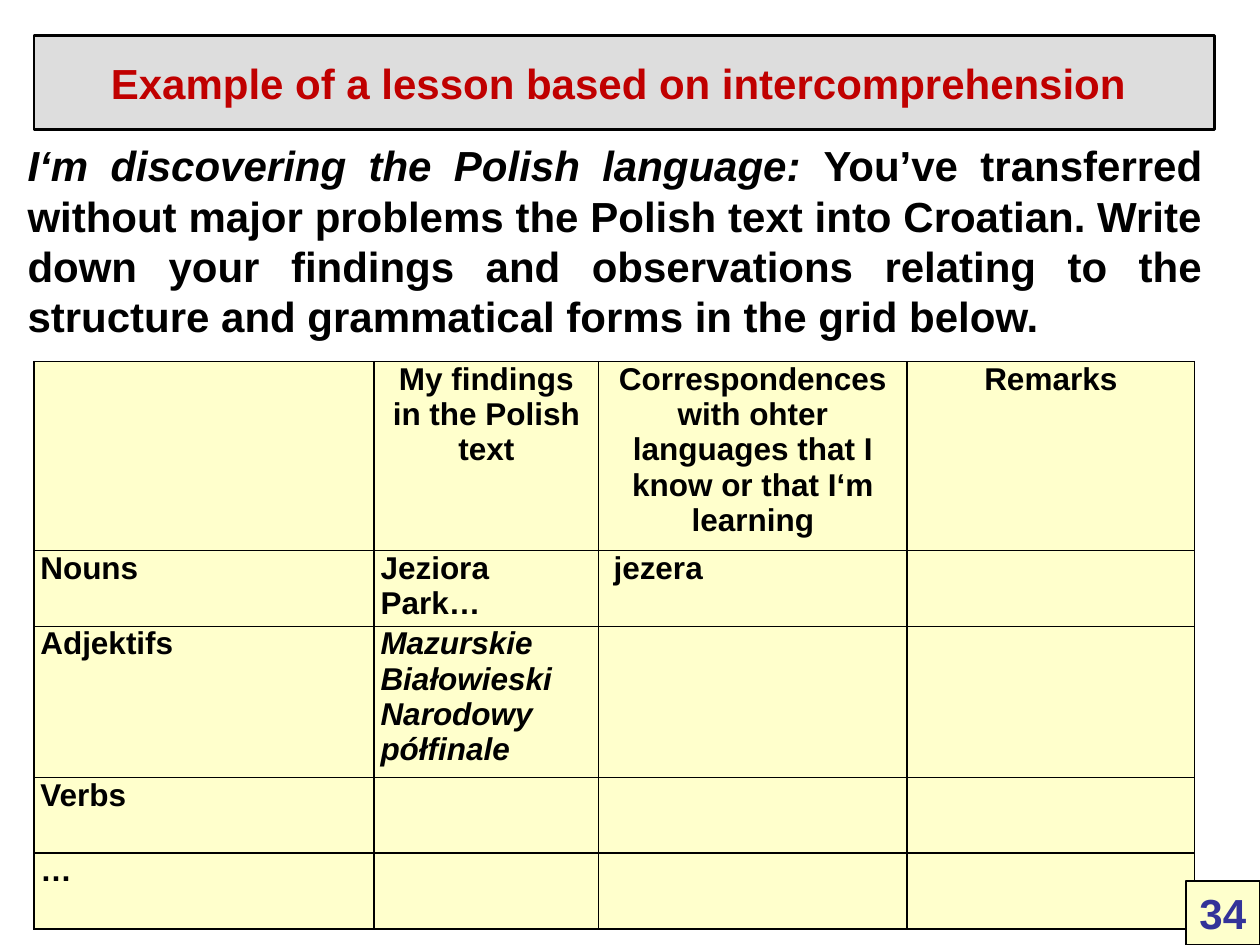
import dataclasses

import lxml.etree
import pptx
import pptx.dml.color
import pptx.enum.shapes
import pptx.enum.text
import pptx.oxml.ns
import pptx.util

COLS, ROWS = 100, 75  # slide grid, each step a tenth of an inch
ALIGN = pptx.enum.text.PP_ALIGN
ANCHOR = pptx.enum.text.MSO_ANCHOR


@dataclasses.dataclass(frozen=True)
class Theme:
    font: str = "Arial"
    ink: str = "000000"
    title: str = "C00000"
    number: str = "333399"
    banner: str = "DDDDDD"
    cream: str = "FFFFCC"
    badge: str = "FEFFCC"
    large: int = 24
    small: int = 18


THEME = Theme()


def span(steps):
    return pptx.util.Inches(steps / 10)


def color(code):
    return pptx.dml.color.RGBColor.from_string(code)


def apply(target, values):
    for name, value in values.items():
        setattr(target, name, value)


def write(para, text, size, ink=THEME.ink, align=ALIGN.LEFT, italic=False):
    para.alignment = align
    run = para.add_run()
    run.text = text
    apply(run.font, {"name": THEME.font, "size": pptx.util.Pt(size),
                     "bold": True, "italic": italic})
    run.font.color.rgb = color(ink)


def add_panel(slide, box, text, fill, ink, width):
    """Outlined rectangle with one centred line of text."""
    panel = slide.shapes.add_shape(
        pptx.enum.shapes.MSO_SHAPE.RECTANGLE, *map(span, box))
    panel.shadow.inherit = False
    panel.fill.solid()
    panel.fill.fore_color.rgb = color(fill)
    panel.line.color.rgb = color(THEME.ink)
    panel.line.width = pptx.util.Pt(width)
    apply(panel.text_frame, {"word_wrap": True, "vertical_anchor": ANCHOR.MIDDLE})
    write(panel.text_frame.paragraphs[0], text, THEME.large, ink, ALIGN.CENTER)


def add_task(slide, box, lead, body):
    frame = slide.shapes.add_textbox(*map(span, box)).text_frame
    apply(frame, {"word_wrap": True,
                  "auto_size": pptx.enum.text.MSO_AUTO_SIZE.SHAPE_TO_FIT_TEXT})
    para = frame.paragraphs[0]
    write(para, lead, THEME.large, align=ALIGN.JUSTIFY, italic=True)
    write(para, body, THEME.large, align=ALIGN.JUSTIFY)


def add_border(cell):
    props = cell._tc.get_or_add_tcPr()
    for side in ("lnL", "lnR", "lnT", "lnB"):
        line = lxml.etree.SubElement(
            props, pptx.oxml.ns.qn("a:" + side), w=str(pptx.util.Pt(1)))
        fill = lxml.etree.SubElement(line, pptx.oxml.ns.qn("a:solidFill"))
        lxml.etree.SubElement(fill, pptx.oxml.ns.qn("a:srgbClr"), val=THEME.ink)


def fill_cell(cell, lines, align, italic):
    add_border(cell)
    cell.fill.solid()
    cell.fill.fore_color.rgb = color(THEME.cream)
    apply(cell, {"margin_left": span(0.5), "margin_right": span(0.5),
                 "margin_top": 0, "margin_bottom": 0})
    frame = cell.text_frame
    for index, text in enumerate(lines):
        para = frame.add_paragraph() if index else frame.paragraphs[0]
        write(para, text, THEME.small, align=align, italic=italic)


def add_grid(slide, box, widths, heights, rows):
    """Table whose column and row shares are scaled to the box."""
    left, top, width, height = box
    table = slide.shapes.add_table(
        len(heights), len(widths), *map(span, box)).table
    apply(table, {"first_row": False, "horz_banding": False})
    for column, share in zip(table.columns, widths):
        column.width = span(width * share / sum(widths))
    for row, share in zip(table.rows, heights):
        row.height = span(height * share / sum(heights))
    for r, row in enumerate(rows):
        for c in range(len(widths)):
            lines = row[c].split("\n") if c < len(row) and row[c] else []
            align = (ALIGN.CENTER if r == 0 else
                     ALIGN.LEFT if c == 0 else ALIGN.JUSTIFY)
            fill_cell(table.cell(r, c), lines, align, (r, c) == (2, 1))


def main():
    deck = pptx.Presentation()
    apply(deck, {"slide_width": span(COLS), "slide_height": span(ROWS)})
    slide = deck.slides.add_slide(deck.slide_layouts[6])

    add_panel(slide, (2.7, 2.8, 93.7, 7.5),
              "Example of a lesson based on intercomprehension ",
              THEME.banner, THEME.title, 1.5)
    add_task(slide, (1.2, 10.6, 95.2, 17),
             "I‘m discovering the Polish language: ",
             "You’ve transferred without major problems the Polish text into "
             "Croatian. Write down your findings and observations relating to "
             "the structure and grammatical forms in the grid below.")
    add_grid(slide, (2.7, 28.7, 92.1, 45), (27, 17.8, 24.5, 22.8),
             (5, 2, 4, 2, 2), [
        ("", "My findings in the Polish text",
         "Correspondences with ohter languages that I know or that I‘m learning",
         "Remarks"),
        ("Nouns", "Jeziora\nPark…", " jezera"),
        ("Adjektifs", "Mazurskie Białowieski Narodowy półfinale"),
        ("Verbs",),
        ("…",),
    ])
    add_panel(slide, (94.1, 69.9, 5.9, 5.1), "34",
              THEME.badge, THEME.number, 1)
    deck.save("out.pptx")


if __name__ == "__main__":
    main()
